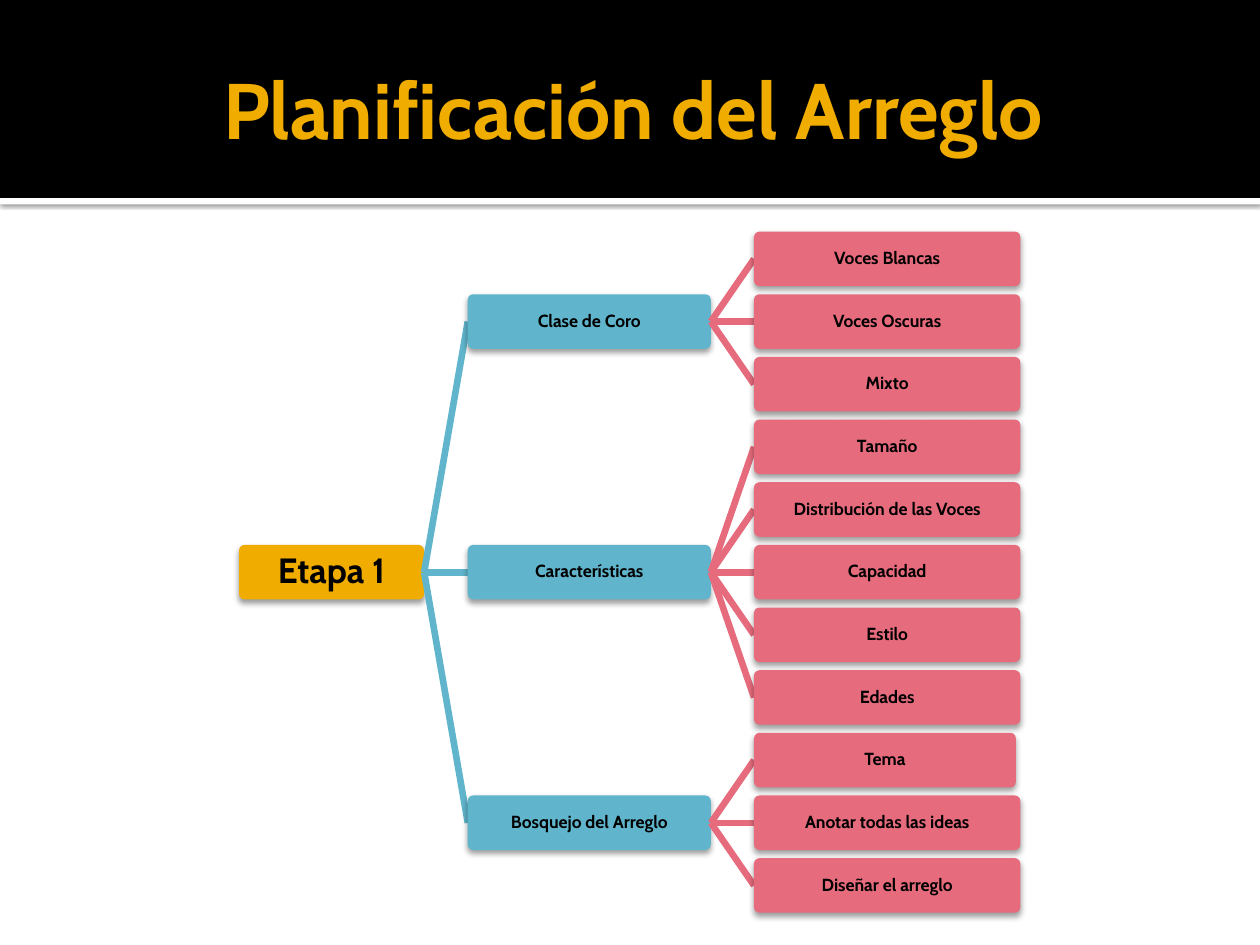
from dataclasses import dataclass, field

from lxml.etree import SubElement
from pptx import Presentation
from pptx.dml.color import RGBColor
from pptx.enum.shapes import MSO_CONNECTOR, MSO_SHAPE
from pptx.enum.text import MSO_ANCHOR, PP_ALIGN
from pptx.oxml.ns import qn
from pptx.shapes.autoshape import Shape
from pptx.slide import Slide
from pptx.text.text import TextFrame
from pptx.util import Cm, Pt

BLACK = RGBColor(0x00, 0x00, 0x00)
WHITE = RGBColor(0xFF, 0xFF, 0xFF)
GOLD = RGBColor(0xF0, 0xAD, 0x00)
BLUE = RGBColor(0x60, 0xB5, 0xCC)
PINK = RGBColor(0xE6, 0x6C, 0x7D)
FONT = "Cabin"

FIRST_TOP, LAST_TOP, LEAF_COUNT = 4.67, 17.3, 11
ROW_PITCH = (LAST_TOP - FIRST_TOP) / (LEAF_COUNT - 1)
BOX_HEIGHT = 1.1


@dataclass(frozen=True)
class Level:
    left: float
    width: float
    color: RGBColor
    size: int


@dataclass
class Node:
    text: str
    children: list["Node"] = field(default_factory=list)
    width: float | None = None
    row: float = 0


LEVELS = [
    Level(4.82, 3.73, GOLD, 20),
    Level(9.43, 4.9, BLUE, 10),
    Level(15.2, 5.37, PINK, 10),
]

STAGE = Node("Etapa 1", [
    Node("Clase de Coro", [
        Node("Voces Blancas"), Node("Voces Oscuras"), Node("Mixto"),
    ]),
    Node("Características", [
        Node("Tamaño"), Node("Distribución de las Voces"), Node("Capacidad"),
        Node("Estilo"), Node("Edades"),
    ]),
    Node("Bosquejo del Arreglo", [
        Node("Tema", width=5.28), Node("Anotar todas las ideas"),
        Node("Diseñar el arreglo"),
    ]),
])


def assign_rows(node: Node, next_row: int = 0) -> int:
    """Give each leaf its own row, centre parents on their children; return the next free row."""
    if not node.children:
        node.row = next_row
        return next_row + 1
    for child in node.children:
        next_row = assign_rows(child, next_row)
    node.row = (node.children[0].row + node.children[-1].row) / 2
    return next_row


def add_shadow(sp: Shape, opacity: int, blur: float, distance: float) -> None:
    effects = sp._element.spPr.find(qn("a:effectLst"))
    shadow = SubElement(effects, qn("a:outerShdw"), blurRad=str(Pt(blur)),
                        dist=str(Pt(distance)), dir="5400000",
                        algn="ctr", rotWithShape="0")
    color = SubElement(shadow, qn("a:srgbClr"), val=str(BLACK))
    SubElement(color, qn("a:alpha"), val=str(opacity * 1000))


def add_block(s: Slide, kind: MSO_SHAPE, left: float, top: float,
              width: float, height: float, color: RGBColor) -> Shape:
    sp = s.shapes.add_shape(kind, Cm(left), Cm(top), Cm(width), Cm(height))
    sp.shadow.inherit = False
    sp.fill.solid()
    sp.fill.fore_color.rgb = color
    sp.line.fill.background()
    return sp


def write(tf: TextFrame, text: str, size: int, color: RGBColor) -> None:
    tf.word_wrap = True
    tf.vertical_anchor = MSO_ANCHOR.MIDDLE
    p = tf.paragraphs[0]
    p.alignment = PP_ALIGN.CENTER
    r = p.add_run()
    r.text = text
    r.font.name = FONT
    r.font.size = Pt(size)
    r.font.bold = True
    r.font.color.rgb = color


def add_box(s: Slide, node: Node, level: Level) -> Shape:
    sp = add_block(s, MSO_SHAPE.ROUNDED_RECTANGLE, level.left,
                   FIRST_TOP + node.row * ROW_PITCH,
                   node.width or level.width, BOX_HEIGHT, level.color)
    sp.adjustments[0] = 0.1
    add_shadow(sp, 38, 3.5, 2)
    tf = sp.text_frame
    tf.margin_left = tf.margin_right = tf.margin_top = tf.margin_bottom = Cm(0.03)
    write(tf, node.text, level.size, BLACK)
    tf.paragraphs[0].line_spacing = 0.9
    return sp


def add_branch(s: Slide, parent: Shape, child: Shape, color: RGBColor) -> None:
    """Join two boxes with a line that lies just behind the child box."""
    line = s.shapes.add_connector(MSO_CONNECTOR.STRAIGHT, 0, 0, 0, 0)
    line.begin_connect(parent, 3)
    line.end_connect(child, 1)
    line.line.color.rgb = color
    line.line.width = Pt(3.78)
    SubElement(line._element.spPr, qn("a:effectLst"))
    child._element.addprevious(line._element)


def add_tree(s: Slide, node: Node, depth: int = 0, parent: Shape | None = None) -> None:
    level = LEVELS[depth]
    sp = add_box(s, node, level)
    if parent is not None:
        add_branch(s, parent, sp, level.color)
    for child in node.children:
        add_tree(s, child, depth + 1, sp)


def add_header(s: Slide) -> None:
    rule = add_block(s, MSO_SHAPE.RECTANGLE, 0, 3.99, 25.4, 0.13, WHITE)
    add_shadow(rule, 60, 2.5, 0.8)
    add_block(s, MSO_SHAPE.RECTANGLE, 0, 0, 25.4, 3.99, BLACK)

    title = s.shapes.title
    s.shapes._spTree.append(title._element)
    title.left, title.top = Cm(1.27), Cm(0.43)
    title.width, title.height = Cm(22.86), Cm(3.48)
    tf = title.text_frame
    tf.margin_left = Cm(0.25)
    tf.margin_right = tf.margin_top = tf.margin_bottom = Cm(0.13)
    write(tf, "Planificación del Arreglo", 45, GOLD)


def main() -> None:
    prs = Presentation()
    prs.slide_width, prs.slide_height = Cm(25.4), Cm(19.05)
    s = prs.slides.add_slide(prs.slide_layouts[5])
    add_header(s)
    assign_rows(STAGE)
    add_tree(s, STAGE)
    prs.save("out.pptx")


if __name__ == "__main__":
    main()
